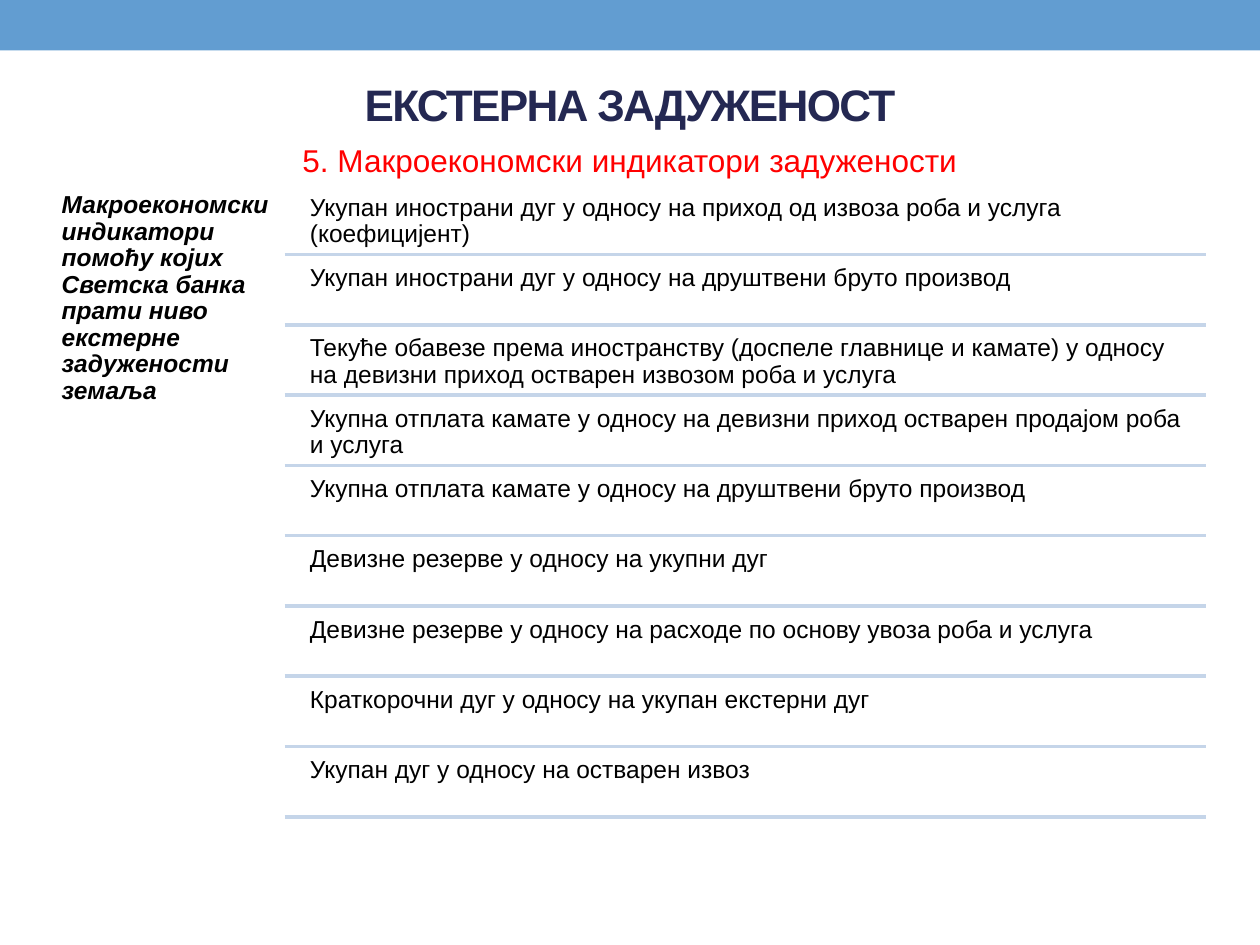
from pptx import Presentation
from pptx.dml.color import RGBColor
from pptx.enum.shapes import MSO_CONNECTOR, MSO_SHAPE
from pptx.enum.text import MSO_ANCHOR, MSO_AUTO_SIZE, PP_ALIGN
from pptx.oxml.ns import qn
from pptx.util import Inches, Pt

COLORS = {
    "band": "629DD1",
    "title": "242852",
    "subtitle": "FF0000",
    "text": "000000",
    "rule": "C5D5E9",
}
FONT = "Arial"
MARGINS = ("margin_left", "margin_top", "margin_right", "margin_bottom")

TITLE = "ЕКСТЕРНА ЗАДУЖЕНОСТ"
SUBTITLE = "5. Макроекономски индикатори задужености"
HEADING = ("Макроекономски индикатори помоћу којих Светска банка "
           "прати ниво екстерне задужености земаља")
INDICATORS = [
    "Укупан инострани дуг у односу на приход од извоза роба и услуга (коефицијент)",
    "Укупан инострани дуг у односу на друштвени бруто производ",
    "Текуће обавезе према иностранству (доспеле главнице и камате) у односу "
    "на девизни приход остварен извозом роба и услуга",
    "Укупна отплата камате у односу на девизни приход остварен продајом роба и услуга",
    "Укупна отплата камате у односу на друштвени бруто производ",
    "Девизне резерве у односу на укупни дуг",
    "Девизне резерве у односу на расходе по основу увоза роба и услуга",
    "Краткорочни дуг у односу на укупан екстерни дуг",
    "Укупан дуг у односу на остварен извоз",
]

ROWS_TOP, ROWS_BOTTOM = 1.49, 6.51
ROW_PITCH = (ROWS_BOTTOM - ROWS_TOP) / len(INDICATORS)
ROW_HEIGHT = 0.53
RULE_LEFT, TEXT_LEFT, RIGHT = 2.26, 2.4, 9.57


def rgb(name):
    return RGBColor.from_string(COLORS[name])


def write(tf, text, color, font, paragraph):
    """Put one formatted paragraph into a text frame and return its run."""
    tf.word_wrap = True
    tf.auto_size = MSO_AUTO_SIZE.NONE
    p = tf.paragraphs[0]
    for name, value in paragraph.items():
        setattr(p, name, value)
    r = p.add_run()
    r.text = text
    r.font.name = FONT
    r.font.color.rgb = rgb(color)
    for name, value in font.items():
        setattr(r.font, name, value)
    return r


def add_band(slide, width):
    sp = slide.shapes.add_shape(MSO_SHAPE.RECTANGLE, 0, 0, width, Inches(0.4))
    sp.shadow.inherit = False
    sp.fill.solid()
    sp.fill.fore_color.rgb = rgb("band")
    sp.line.fill.background()


def set_title(slide):
    title = slide.shapes.title
    box = {"left": 0.5, "top": 0.58, "width": 9, "height": 0.49}
    for name, value in box.items():
        setattr(title, name, Inches(value))
    tf = title.text_frame
    tf.vertical_anchor = MSO_ANCHOR.MIDDLE
    r = write(tf, TITLE, "title", {"size": Pt(25.2), "bold": True},
              {"alignment": PP_ALIGN.CENTER})
    r.font._element.set("spc", "-100")


def add_subtitle(slide):
    box = slide.shapes.add_textbox(Inches(0.5), Inches(1.07), Inches(9), Inches(0.4))
    write(box.text_frame, SUBTITLE, "subtitle", {"size": Pt(18)},
          {"alignment": PP_ALIGN.CENTER, "space_before": Pt(3.6)})


def add_list_text(slide, text, left, top, width, height, **font):
    box = slide.shapes.add_textbox(*map(Inches, (left, top, width, height)))
    tf = box.text_frame
    for margin in MARGINS:
        setattr(tf, margin, Inches(0.06))
    write(tf, text, "text", {"size": Pt(14), **font},
          {"line_spacing": 0.9, "space_after": Pt(4.9)})


def add_rule(slide, y):
    line = slide.shapes.add_connector(
        MSO_CONNECTOR.STRAIGHT, *map(Inches, (RULE_LEFT, y, RIGHT, y)))
    line.line.color.rgb = rgb("rule")
    line.line.width = Pt(2.08)
    sp_pr = line._element.spPr
    sp_pr.append(sp_pr.makeelement(qn("a:effectLst"), {}))


def add_indicators(slide):
    add_list_text(slide, HEADING, 0.43, 1.47, 1.83, 5.04, bold=True, italic=True)
    for i, text in enumerate(INDICATORS):
        top = ROWS_TOP + i * ROW_PITCH
        add_list_text(slide, text, TEXT_LEFT, top, RIGHT - TEXT_LEFT, ROW_HEIGHT)
        add_rule(slide, top + ROW_HEIGHT)


def main():
    prs = Presentation()
    prs.slide_width, prs.slide_height = Inches(10), Inches(7.5)
    slide = prs.slides.add_slide(prs.slide_layouts[5])
    add_band(slide, prs.slide_width)
    set_title(slide)
    add_subtitle(slide)
    add_indicators(slide)
    prs.save("out.pptx")


if __name__ == "__main__":
    main()
